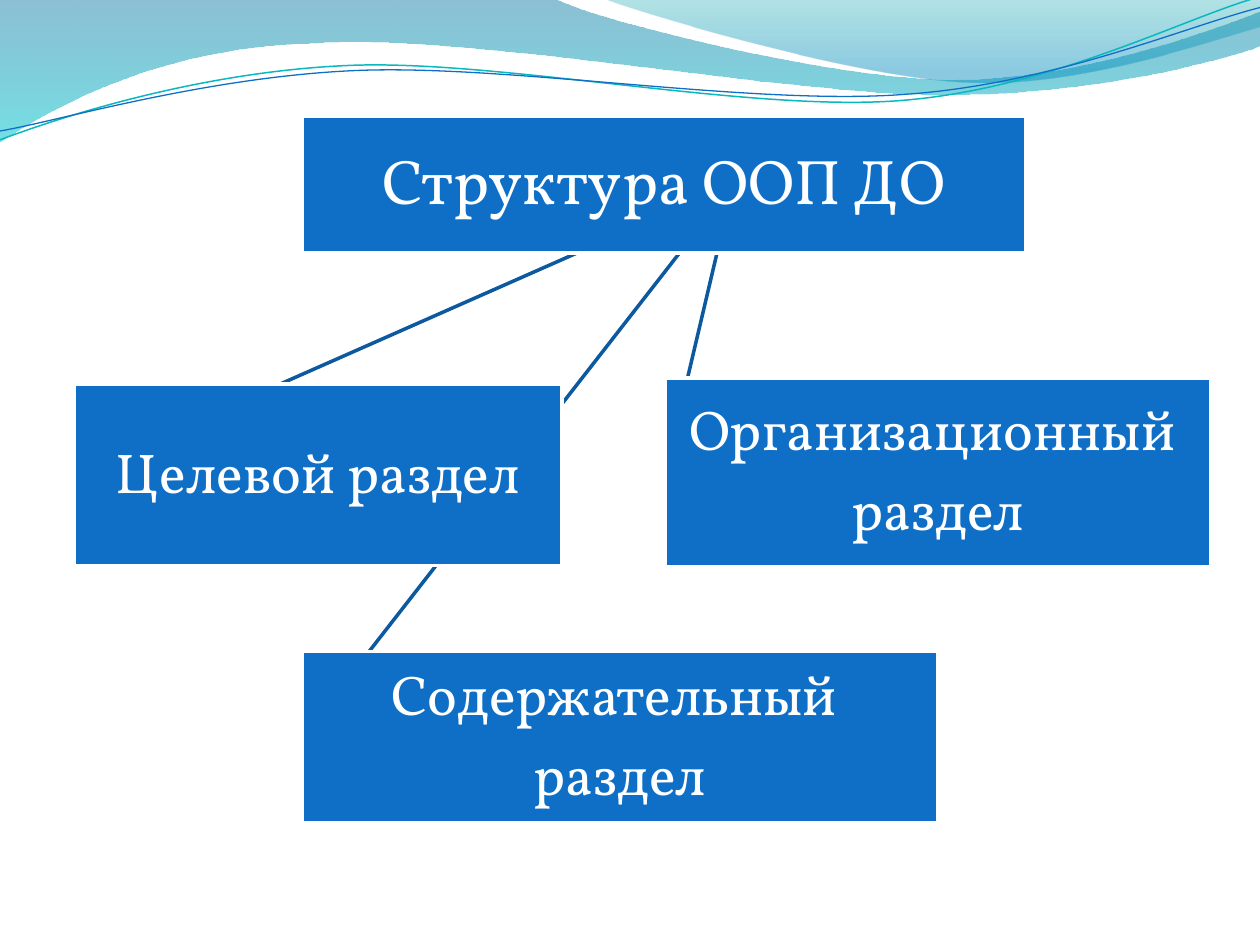
from pptx import Presentation
from pptx.dml.color import RGBColor
from pptx.enum.shapes import MSO_CONNECTOR as Link, MSO_SHAPE as Form
from pptx.enum.text import MSO_ANCHOR as Anchor, PP_ALIGN as Align
from pptx.oxml.ns import qn
from pptx.util import Inches, Pt
from lxml.etree import SubElement

WAVE = [(0, 0), (4.4, -0.01), (4.76, 0.17, 6.64, 0.63, 7.58, 0.63),
        (8.53, 0.63, 9.58, 0.26, 10, 0.09), (10.01, 0.36),
        (9.83, 0.44, 8.7, 0.76, 7.46, 0.75),
        (6.22, 0.75, 3.82, 0.28, 2.57, 0.34),
        (1.29, 0.36, 0.46, 0.83, -0.01, 1.13)]
CREST = [(4.79, -0.01), (5.09, 0.11, 6.82, 0.62, 7.69, 0.65),
         (8.56, 0.69, 9.61, 0.32, 10, 0.21), (10, 0)]
TEAL = [(0, 1.11), (0.48, 0.93, 1.58, 0.57, 2.77, 0.52),
        (3.95, 0.47, 5.93, 0.89, 7.13, 0.8),
        (8.33, 0.71, 9.38, 0.15, 9.98, -0.02)]
BLUE = [(0, 1.04), (0.47, 0.96, 1.64, 0.61, 2.83, 0.56),
        (4.03, 0.51, 5.97, 0.84, 7.17, 0.75),
        (8.36, 0.67, 9.41, 0.21, 10, 0.06)]
PARTS = [(["Целевой раздел"], (0.59, 3.05, 3.87, 1.44)),
         (["Организационный ", "раздел"], (5.28, 3, 4.33, 1.5)),
         (["Содержательный ", "раздел"], (2.4, 5.17, 5.04, 1.36))]
HEAD = (2.4, 0.92, 5.74, 1.09)
HUB = (5.82, 1.46)


def tint(code):
    """Turn a hex string into a colour."""
    return RGBColor.from_string(code)


def bend(shape, path):
    """Turn each run of three segments of a curve into one cubic."""
    nodes = iter(list(shape._element.iter(qn("a:lnTo"))))
    for part in path[1:]:
        first = next(nodes)
        if len(part) == 6:
            first.tag = qn("a:cubicBezTo")
            for node in (next(nodes), next(nodes)):
                first.append(node[0])
                node.getparent().remove(node)


def write(shape, lines, size=32, font="Vollkorn", color="FFFFFF", inset=0.02):
    """Fill a shape with centred paragraphs."""
    frame = shape.text_frame
    frame.word_wrap = True
    frame.vertical_anchor = Anchor.MIDDLE
    frame.margin_left = frame.margin_right = Inches(inset)
    frame.margin_top = frame.margin_bottom = Inches(inset)
    for i, line in enumerate(lines):
        para = frame.add_paragraph() if i else frame.paragraphs[0]
        para.alignment = Align.CENTER
        para.line_spacing = 0.9
        para.space_before = Pt(0)
        para.space_after = Pt(0.35 * size)
        run = para.add_run()
        run.text = line
        run.font.size = Pt(size)
        run.font.name = font
        run.font.color.rgb = tint(color)


class Deck:
    """Hold the style and the current slide."""

    fill, edge, link = "0F6FC6", "FFFFFF", "0C599F"

    def __init__(self):
        """Open a deck with one title slide."""
        self.file = Presentation()
        self.file.slide_width, self.file.slide_height = Inches(10), Inches(7.5)
        self.slide = self.file.slides.add_slide(self.file.slide_layouts[5])
        self.shapes = self.slide.shapes

    def free(self, path, close):
        """Draw a freeform of corners and cubic curves."""
        pts = [(Inches(part[i]), Inches(part[i + 1]))
               for part in path for i in range(0, len(part), 2)]
        pen = self.shapes.build_freeform(*pts[0])
        pen.add_line_segments(pts[1:], close=close)
        shape = pen.convert_to_shape()
        bend(shape, path)
        shape.shadow.inherit = False
        return shape

    def wave(self, path, stops):
        """Draw a closed wave with a clear downward gradient."""
        shape = self.free(path, True)
        shape.line.fill.background()
        shape.fill.gradient()
        shape.fill.gradient_angle = 270
        for stop, (place, code, _) in zip(shape.fill.gradient_stops, stops):
            stop.position = place
            stop.color.rgb = tint(code)
        nodes = list(shape._element.spPr.iter(qn("a:srgbClr")))
        for node, (*_, alpha) in zip(nodes, stops):
            SubElement(node, qn("a:alpha")).set("val", str(alpha * 1000))

    def curve(self, path, code, width):
        """Draw an open curved line."""
        shape = self.free(path, False)
        shape.fill.background()
        shape.line.color.rgb = tint(code)
        shape.line.width = Pt(width)

    def join(self, start, box):
        """Link a point to the left side of a box, behind the boxes."""
        ends = [Inches(n) for n in start * 2]
        line = self.shapes.add_connector(Link.STRAIGHT, *ends)
        line.end_connect(box, 1)
        line.line.color.rgb = tint(self.link)
        line.line.width = Pt(2)
        SubElement(line._element.spPr, qn("a:effectLst"))
        self.shapes.title._element.addprevious(line._element)

    def paint(self, shape):
        """Give a shape the box fill and edge."""
        shape.fill.solid()
        shape.fill.fore_color.rgb = tint(self.fill)
        shape.line.color.rgb = tint(self.edge)
        shape.line.width = Pt(2)

    def title(self, text, area):
        """Place the title as a box in front of the waves."""
        shape = self.shapes.title
        self.shapes._spTree.append(shape._element)
        shape.left, shape.top, shape.width, shape.height = map(Inches, area)
        self.paint(shape)
        write(shape, [text], size=36, inset=0.03)

    def box(self, lines, area):
        """Add a box with text."""
        shape = self.shapes.add_shape(Form.RECTANGLE, *map(Inches, area))
        shape.shadow.inherit = False
        self.paint(shape)
        write(shape, lines)
        return shape


def main():
    """Build the slide."""
    deck = Deck()
    deck.wave(WAVE, [(0, "0074A1", 45), (1, "00C6CF", 55)])
    deck.wave(CREST, [(0, "00A1A9", 30), (0.8, "008BBF", 45)])
    deck.curve(TEAL, "0AB8BF", 0.85)
    deck.curve(BLUE, "0F6FC6", 0.75)
    deck.title("Структура ООП ДО", HEAD)
    boxes = [deck.box(lines, area) for lines, area in PARTS]
    for box in reversed(boxes):
        deck.join(HUB, box)
    deck.file.save("out.pptx")


if __name__ == "__main__":
    main()
